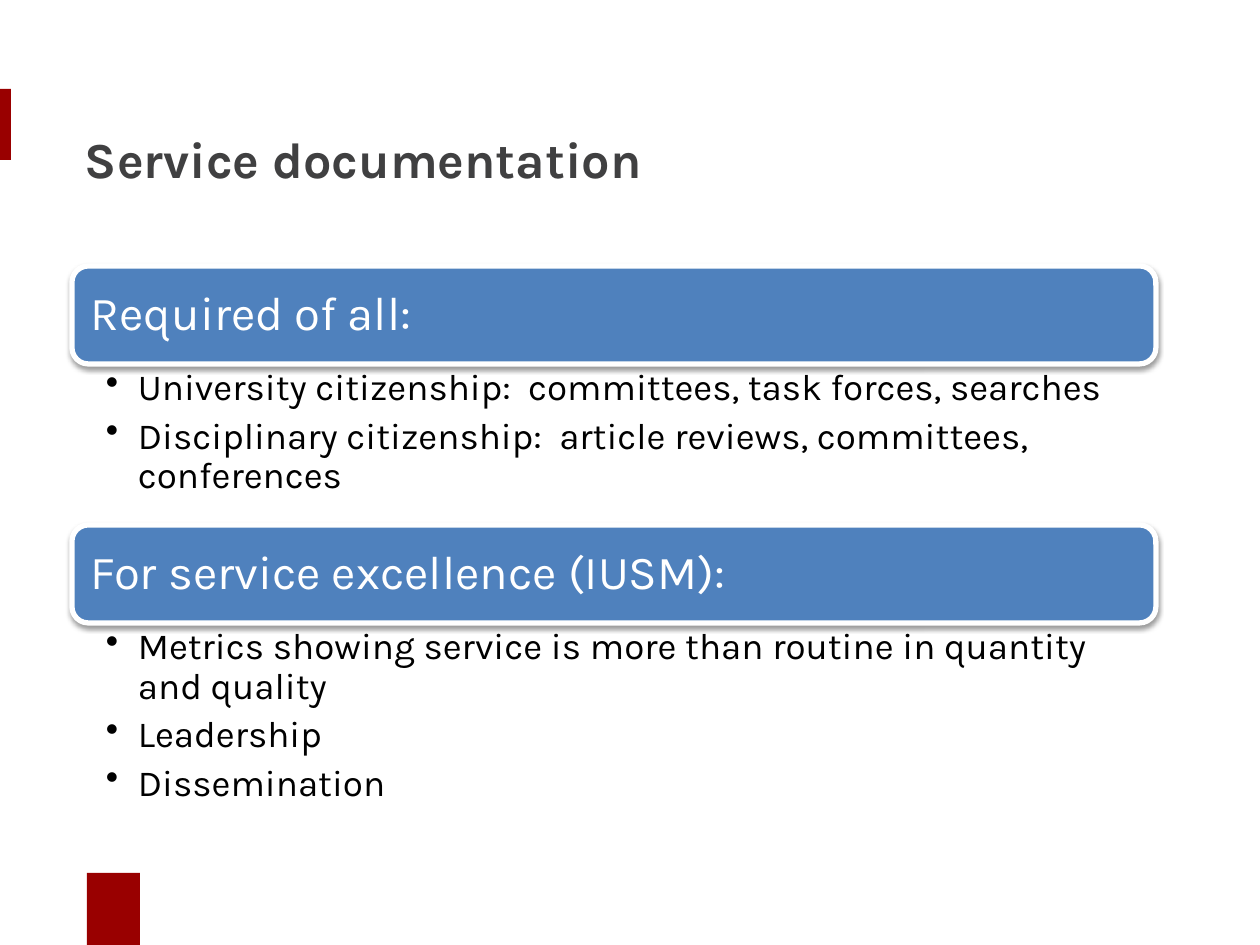
"""Build the service documentation slide."""
from dataclasses import dataclass

from lxml.etree import SubElement
from pptx import Presentation
from pptx.dml.color import RGBColor
from pptx.enum.shapes import MSO_SHAPE
from pptx.enum.text import MSO_ANCHOR, PP_ALIGN
from pptx.oxml.ns import qn
from pptx.util import Emu, Pt

TITLE = "Service documentation"
SECTIONS = [
    ("Required of all:", 161, [
        "University citizenship:  committees, task forces, searches",
        "Disciplinary citizenship:  article reviews, committees, conferences",
    ]),
    ("For service excellence (IUSM):", 215, [
        "Metrics showing service is more than routine in quantity and quality",
        "Leadership",
        "Dissemination",
    ]),
]
ACCENTS = [(0, 89, 11, 71), (87, 873, 53, 73)]
TITLE_BOX = (72, 86, 629, 144)
LEFT, TOP, WIDTH, BAR_H = 72, 266, 1084, 98


@dataclass(frozen=True)
class Theme:
    font: str = "Karla"
    accent: str = "990000"
    bar: str = "4F81BD"
    light: str = "FFFFFF"
    title: str = "404041"
    body: str = "000000"
    title_pt: float = 28.8
    bar_pt: float = 27
    body_pt: float = 21


THEME = Theme()


def px(n):
    return Emu(round(n * 914400 / 126))


def color(value):
    return RGBColor.from_string(value)


def set_text(tf, lines, size, ink, bold=False, anchor=MSO_ANCHOR.TOP,
             insets=(13, 6, 13, 6), spacing=None, after=0, bullet=False):
    tf.word_wrap = True
    tf.vertical_anchor = anchor
    tf.margin_left, tf.margin_top, tf.margin_right, tf.margin_bottom = map(px, insets)
    for i, line in enumerate(lines):
        p = tf.paragraphs[0] if i == 0 else tf.add_paragraph()
        p.alignment = PP_ALIGN.LEFT
        p.line_spacing = spacing
        p.space_after = Pt(after)
        if bullet:
            pPr = p._p.get_or_add_pPr()
            pPr.set("marL", str(px(32)))
            pPr.set("indent", str(px(-32)))
            SubElement(pPr, qn("a:buChar"), char="•")
        r = p.add_run()
        r.text = line
        r.font.name, r.font.size, r.font.bold = THEME.font, Pt(size), bold
        r.font.color.rgb = color(ink)


def add_box(slide, kind, box, fill):
    s = slide.shapes.add_shape(kind, *map(px, box))
    s.fill.solid()
    s.fill.fore_color.rgb = color(fill)
    s.line.fill.background()
    s.shadow.inherit = False
    return s


def add_shadow(s):
    effects = s._element.spPr.find(qn("a:effectLst"))
    shadow = SubElement(effects, qn("a:outerShdw"), blurRad=str(Pt(3.1)),
                        dist=str(Pt(1.6)), dir="5400000", rotWithShape="0")
    ink = SubElement(shadow, qn("a:srgbClr"), val=THEME.body)
    SubElement(ink, qn("a:alpha"), val="38000")


def add_section(slide, top, heading, height, items):
    bar = add_box(slide, MSO_SHAPE.ROUNDED_RECTANGLE, (LEFT, top, WIDTH, BAR_H), THEME.bar)
    bar.line.color.rgb = color(THEME.light)
    bar.line.width = Pt(3)
    add_shadow(bar)
    set_text(bar.text_frame, [heading], THEME.bar_pt, THEME.light,
             anchor=MSO_ANCHOR.MIDDLE, insets=(14, 14, 14, 14), spacing=0.9)
    body = slide.shapes.add_textbox(*map(px, (LEFT, top + BAR_H, WIDTH, height)))
    set_text(body.text_frame, items, THEME.body_pt, THEME.body,
             insets=(34, 5, 26, 5), spacing=0.9, after=5, bullet=True)
    return top + BAR_H + height


def main():
    prs = Presentation()
    prs.slide_width, prs.slide_height = px(1260), px(945)
    slide = prs.slides.add_slide(prs.slide_layouts[5])
    title = slide.shapes.title
    title.left, title.top, title.width, title.height = map(px, TITLE_BOX)
    set_text(title.text_frame, [TITLE], THEME.title_pt, THEME.title,
             bold=True, anchor=MSO_ANCHOR.MIDDLE)
    for box in ACCENTS:
        add_box(slide, MSO_SHAPE.RECTANGLE, box, THEME.accent)
    top = TOP
    for heading, height, items in SECTIONS:
        top = add_section(slide, top, heading, height, items)
    prs.save("out.pptx")


if __name__ == "__main__":
    main()
